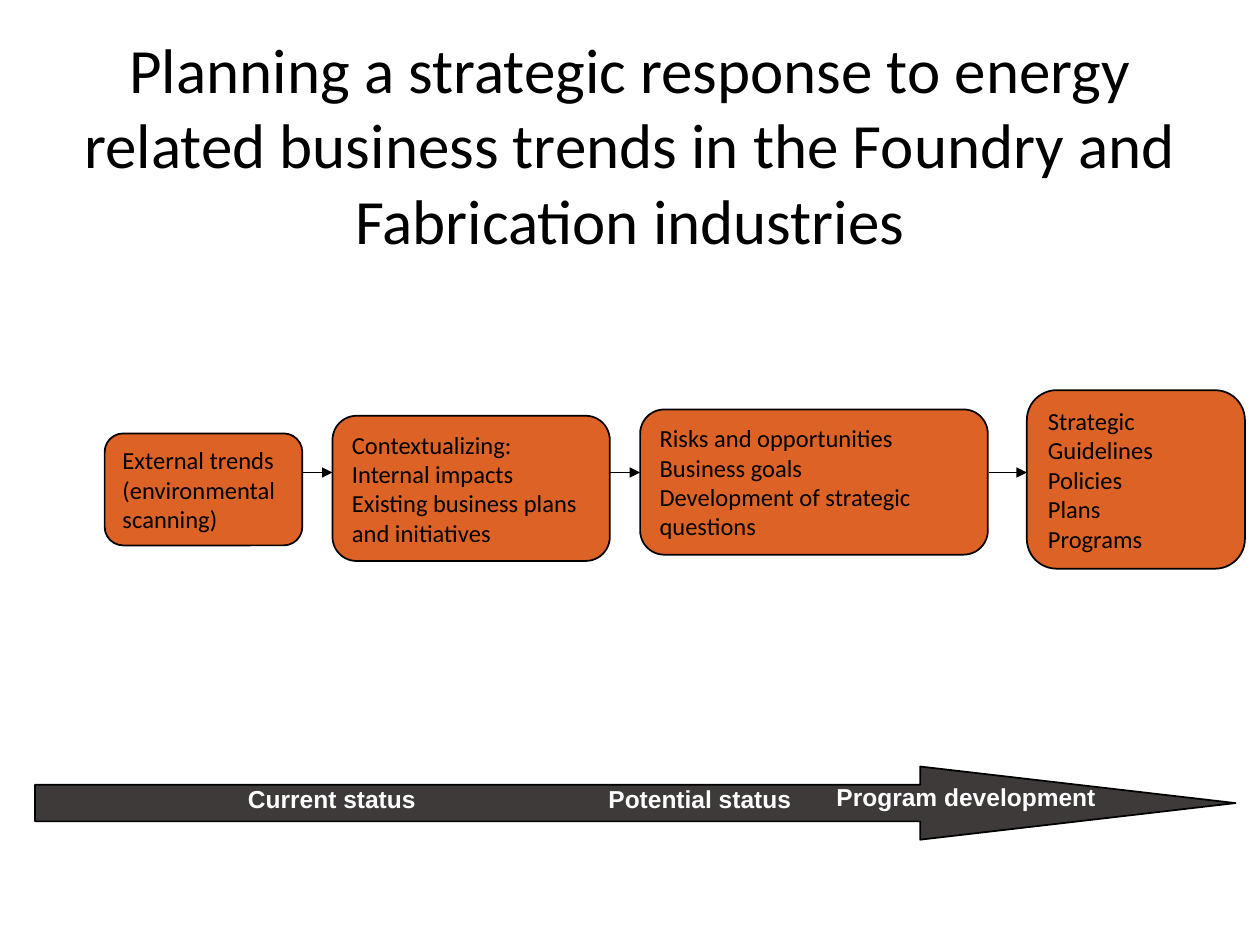
from dataclasses import dataclass

from lxml import etree
from pptx import Presentation
from pptx.dml.color import RGBColor
from pptx.enum import shapes, text
from pptx.oxml import ns
from pptx.util import Pt


@dataclass(frozen=True)
class Theme:
    black: RGBColor = RGBColor(0x00, 0x00, 0x00)
    white: RGBColor = RGBColor(0xFF, 0xFF, 0xFF)
    orange: RGBColor = RGBColor(0xDD, 0x62, 0x25)
    charcoal: RGBColor = RGBColor(0x3E, 0x3A, 0x39)
    title_size: Pt = Pt(36)
    body_size: Pt = Pt(14)
    body_font: str = "Calibri"
    label_font: str = "Arial"


theme = Theme()


def write(shape, lines, font, size, color, align=text.PP_ALIGN.LEFT,
          anchor=text.MSO_ANCHOR.MIDDLE, bold=False):
    frame = shape.text_frame
    frame.word_wrap = True
    frame.vertical_anchor = anchor
    frame.text = "\n".join(lines)
    for para in frame.paragraphs:
        para.alignment = align
        para.font.name = font
        para.font.size = size
        para.font.bold = bold
        para.font.color.rgb = color


def paint(shape, fill):
    shape.shadow.inherit = False
    shape.fill.solid()
    shape.fill.fore_color.rgb = fill
    shape.line.color.rgb = theme.black
    shape.line.width = Pt(1)


deck = Presentation()
deck.slide_width, deck.slide_height = Pt(720), Pt(540)
page = deck.slides.add_slide(deck.slide_layouts[6])

# Title
title = page.shapes.add_textbox(Pt(36), Pt(21.6), Pt(648), Pt(121))
write(title, ["Planning a strategic response to energy related business trends "
              "in the Foundry and Fabrication industries"],
      theme.body_font, theme.title_size, theme.black, text.PP_ALIGN.CENTER)

# Arrows leading into each later step, all on one level
flow_y = Pt(270)
for start, end in [(168.5, 190), (344.2, 365.8), (565.2, 586.8)]:
    link = page.shapes.add_connector(
        shapes.MSO_CONNECTOR.STRAIGHT, Pt(start), flow_y, Pt(end), flow_y)
    link.line.color.rgb = theme.black
    link.line.width = Pt(0.75)
    etree.SubElement(link.line._get_or_add_ln(), ns.qn("a:tailEnd"), type="triangle")
    etree.SubElement(link._element.spPr, ns.qn("a:effectLst"))

# Steps: left, top, width, height, lines
steps = [
    (59.8, 247.7, 113, 64, ["External trends (environmental scanning)"]),
    (190, 237.6, 158.5, 83, ["Contextualizing:", "Internal impacts",
                             "Existing business plans and initiatives"]),
    (365.8, 234, 198.7, 83, ["Risks and opportunities", "Business goals",
                             "Development of strategic questions"]),
    (586.8, 223, 124.6, 102, ["Strategic Guidelines", "Policies", "Plans", "Programs"]),
]
for left, top, width, height, lines in steps:
    box = page.shapes.add_shape(shapes.MSO_SHAPE.ROUNDED_RECTANGLE,
                                Pt(left), Pt(top), Pt(width), Pt(height))
    paint(box, theme.orange)
    write(box, lines, theme.body_font, theme.body_size, theme.black)

# Timeline arrow
timeline = page.shapes.add_shape(shapes.MSO_SHAPE.RIGHT_ARROW,
                                 Pt(20), Pt(438), Pt(686), Pt(41.8))
timeline.adjustments[0] = 0.5
timeline.adjustments[1] = 4.31
paint(timeline, theme.charcoal)

# Timeline labels
for left, top, width, label in [(134.6, 444.2, 208, "Current status"),
                                (340.6, 444.2, 172, "Potential status"),
                                (470.9, 443.5, 172, "Program development")]:
    box = page.shapes.add_textbox(Pt(left), Pt(top), Pt(width), Pt(24))
    write(box, [label], theme.label_font, theme.body_size, theme.white,
          anchor=text.MSO_ANCHOR.TOP, bold=True)

deck.save("out.pptx")
